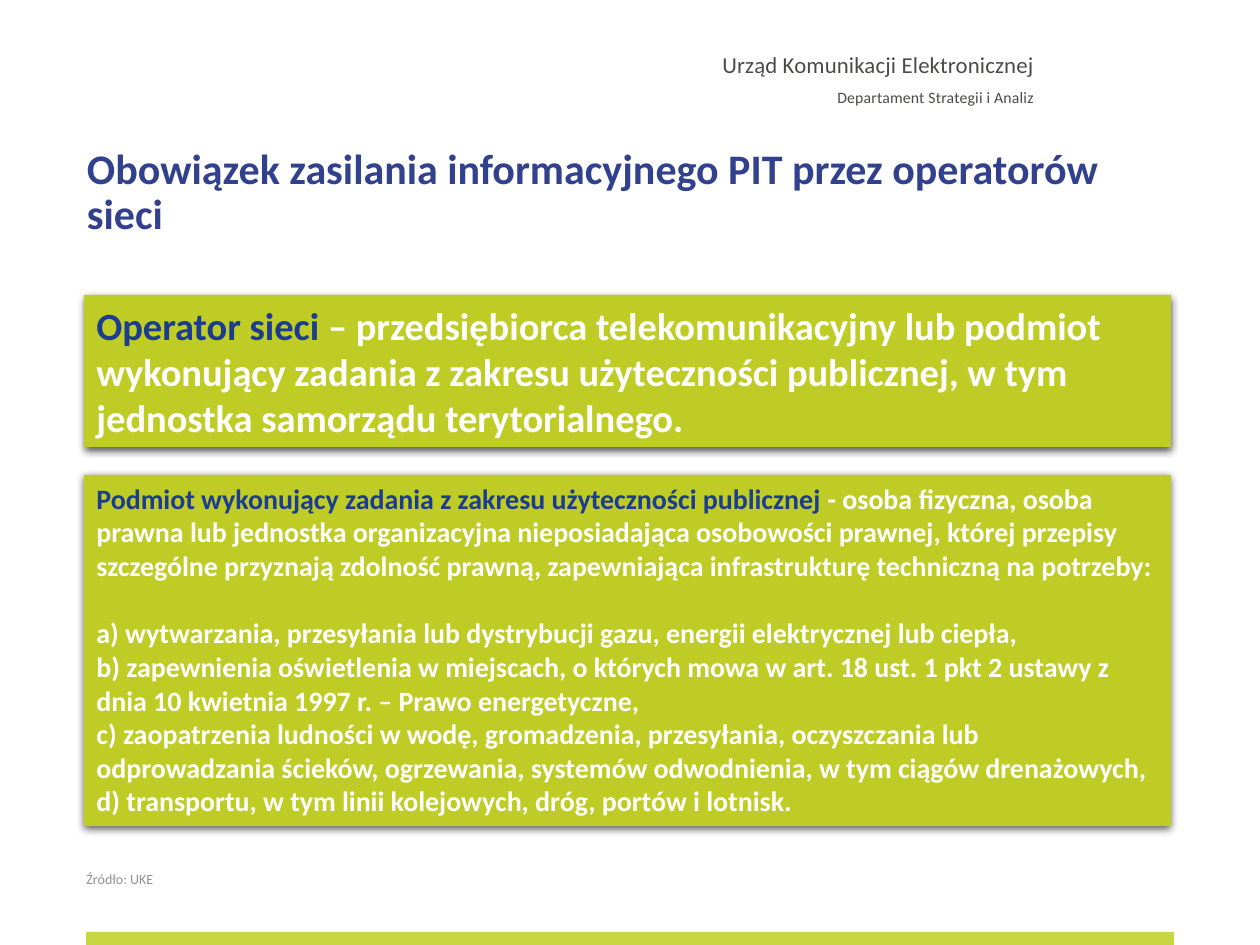
from lxml.etree import SubElement
from pptx import Presentation
from pptx.dml.color import RGBColor
from pptx.enum.shapes import MSO_SHAPE as Shape
from pptx.enum.text import MSO_ANCHOR as Anchor, PP_ALIGN as Align
from pptx.oxml.ns import qn
from pptx.util import Emu, Pt

PX = 914400 / 126
GREEN, NAVY, WHITE, GREY = "BECC25", "1B3C8F", "FFFFFF", "4A4A49"


def color(value):
    return RGBColor.from_string(value)


def write(shape, text, size=16, fill=WHITE, bold=False, lead="", align=Align.LEFT,
          line=1.0, before=0, spacing=0, first=False):
    frame = shape.text_frame
    frame.word_wrap = True
    paragraph = frame.paragraphs[0] if first else frame.add_paragraph()
    paragraph.alignment = align
    paragraph.line_spacing = line
    paragraph.space_before = Pt(before)
    for words, tint in ((lead, NAVY), (text, fill)):
        if words:
            run = paragraph.add_run()
            run.text = words
            run.font.name = "Calibri"
            run.font.size = Pt(size)
            run.font.bold = bold
            run.font.color.rgb = color(tint)
            if spacing:
                run.font._element.set("spc", str(spacing))


presentation = Presentation()
presentation.slide_width = Emu(round(1260 * PX))
presentation.slide_height = Emu(round(945 * PX))
slide = presentation.slides.add_slide(presentation.slide_layouts[6])

boxes = {}
for name, bounds in {
    "header": (184, 45, 862, 69),
    "source": (74, 864, 198, 30),
    "title": (87, 123, 1086, 116),
}.items():
    boxes[name] = slide.shapes.add_textbox(*(Emu(round(n * PX)) for n in bounds))

for name, bounds, fill in (
    ("footer", (86, 932, 1088, 13), "C7D540"),
    ("operator", (84, 295, 1087, 152), GREEN),
    ("entity", (84, 475, 1087, 351), GREEN),
):
    shape = slide.shapes.add_shape(Shape.RECTANGLE, *(Emu(round(n * PX)) for n in bounds))
    shape.shadow.inherit = False
    shape.fill.solid()
    shape.fill.fore_color.rgb = color(fill)
    shape.line.fill.background()
    boxes[name] = shape

for name in ("operator", "entity"):
    effects = boxes[name]._element.spPr.find(qn("a:effectLst"))
    shadow = SubElement(effects, qn("a:outerShdw"), blurRad=str(Pt(4.5)), dist=str(Pt(1.5)),
                        dir="5400000", algn="ctr", rotWithShape="0")
    black = SubElement(shadow, qn("a:srgbClr"), val="000000")
    SubElement(black, qn("a:alpha"), val="63000")

write(boxes["header"], "Urząd Komunikacji Elektronicznej", size=13, fill=GREY,
      align=Align.RIGHT, spacing=10, first=True)
write(boxes["header"], "Departament Strategii i Analiz", size=9, fill=GREY,
      align=Align.RIGHT, line=1.5, spacing=10)
write(boxes["source"], "Źródło: UKE", size=8, fill="929292", first=True)

title_frame = boxes["title"].text_frame
title_frame.margin_left = 0
title_frame.margin_top = title_frame.margin_bottom = Emu(round(25 * PX))
write(boxes["title"], "Obowiązek zasilania informacyjnego PIT przez operatorów sieci",
      size=24, fill="31418D", bold=True, line=0.9, first=True)

boxes["operator"].text_frame.vertical_anchor = Anchor.MIDDLE
write(boxes["operator"],
      " – przedsiębiorca telekomunikacyjny lub podmiot wykonujący zadania z zakresu "
      "użyteczności publicznej, w tym jednostka samorządu terytorialnego.",
      size=22, bold=True, lead="Operator sieci", first=True)

boxes["entity"].text_frame.vertical_anchor = Anchor.TOP
write(boxes["entity"],
      " - osoba fizyczna, osoba prawna lub jednostka organizacyjna nieposiadająca "
      "osobowości prawnej, której przepisy szczególne przyznają zdolność prawną, "
      "zapewniająca infrastrukturę techniczną na potrzeby:",
      bold=True, lead="Podmiot wykonujący zadania z zakresu użyteczności publicznej", first=True)
purposes = (
    "a) wytwarzania, przesyłania lub dystrybucji gazu, energii elektrycznej lub ciepła,",
    "b) zapewnienia oświetlenia w miejscach, o których mowa w art. 18 ust. 1 pkt 2 ustawy z "
    "dnia 10 kwietnia 1997 r. – Prawo energetyczne,",
    "c) zaopatrzenia ludności w wodę, gromadzenia, przesyłania, oczyszczania lub "
    "odprowadzania ścieków, ogrzewania, systemów odwodnienia, w tym ciągów drenażowych,",
    "d) transportu, w tym linii kolejowych, dróg, portów i lotnisk.",
)
for index, purpose in enumerate(purposes):
    write(boxes["entity"], purpose, bold=True, before=0 if index else 19.5)

presentation.save("out.pptx")
